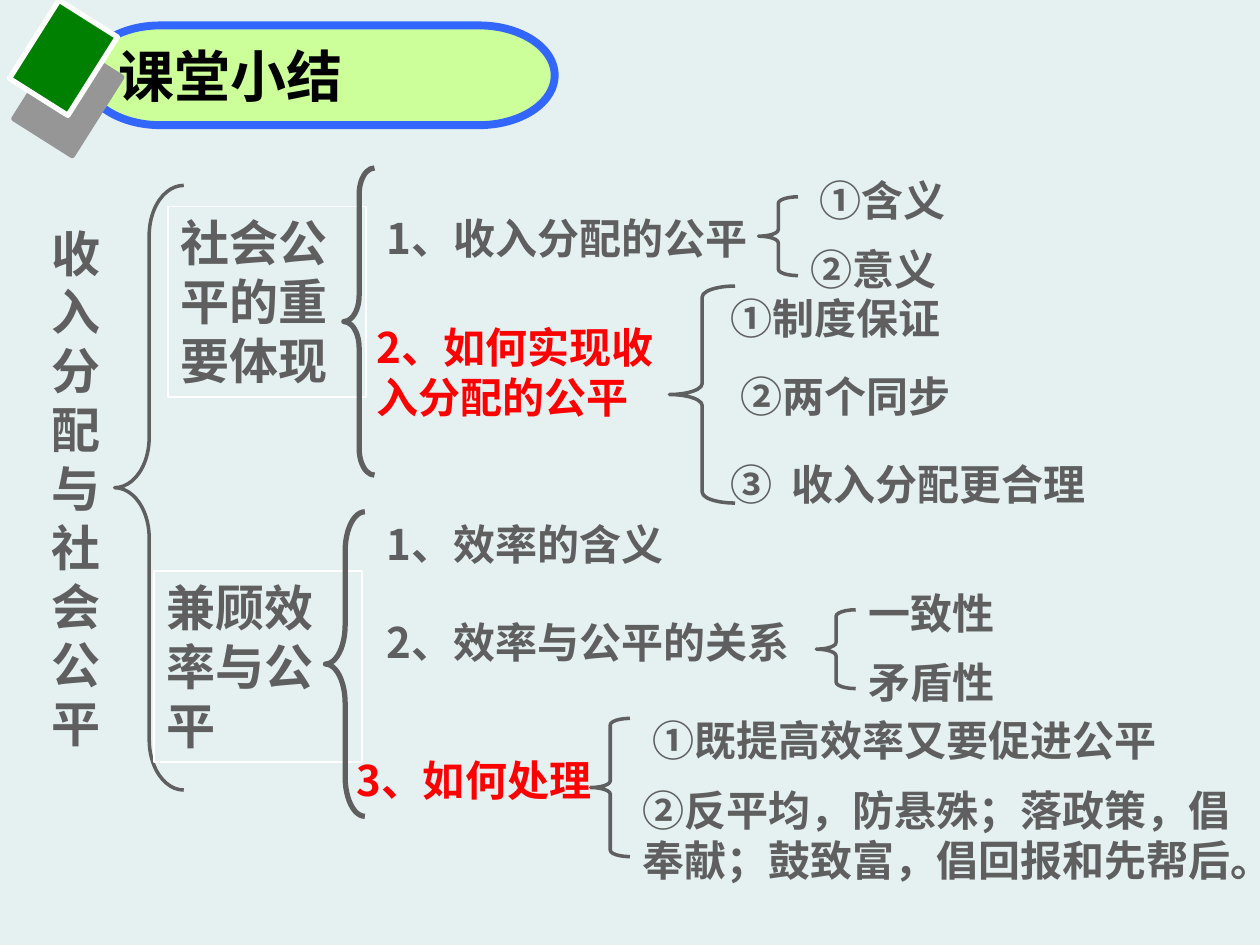
import dataclasses

import pptx
import pptx.dml.color
import pptx.enum.shapes
import pptx.enum.text
import pptx.util

Pt = pptx.util.Pt
Kind = pptx.enum.shapes.MSO_SHAPE


@dataclasses.dataclass(frozen=True)
class Theme:
    """Colours, fonts and type sizes of the slide."""
    back: str = "E5F1F1"
    text: str = "5F5F5F"
    stress: str = "FF0000"
    head: str = "000000"
    pill: str = "CCFF99"
    rim: str = "3366FF"
    shade: str = "969696"
    tile: str = "008000"
    edge: str = "FFFFFF"
    sans: str = "Noto Sans CJK SC"
    plain: str = "Calibri"
    large: int = 32
    mid: int = 28
    small: int = 24


LOOK = Theme()


def tint(code):
    """Turn a hex code into a colour."""
    return pptx.dml.color.RGBColor.from_string(code)


def place(box, spot):
    """Return lengths for a spot inside a box."""
    left, top, width, height = spot
    return Pt(box[0] + left), Pt(box[1] + top), Pt(width), Pt(height)


def style(frame, size, color, font, wrap=True):
    """Format all the text of a frame."""
    frame.word_wrap = wrap
    for para in frame.paragraphs:
        para.alignment = pptx.enum.text.PP_ALIGN.LEFT
        for run in para.runs:
            run.font.size = Pt(size)
            run.font.bold = True
            run.font.name = font
            run.font.color.rgb = tint(color)


def shape(slide, box, spot, kind, fill, line, weight):
    """Add a preset shape with its fill and line."""
    item = slide.shapes.add_shape(kind, *place(box, spot))
    item.shadow.inherit = False
    if fill:
        item.fill.solid()
        item.fill.fore_color.rgb = tint(fill)
    else:
        item.fill.background()
    item.line.color.rgb = tint(line)
    item.line.width = Pt(weight)
    return item


def brace(slide, box, spot, bend=0.167, weight=2):
    """Add a left brace."""
    item = shape(slide, box, spot, Kind.LEFT_BRACE, None, LOOK.text, weight)
    item.adjustments[0] = bend


def note(slide, box, spot, text, color=LOOK.text, size=LOOK.small,
         font=LOOK.sans):
    """Add a wrapped text box."""
    item = slide.shapes.add_textbox(*place(box, spot))
    item.text_frame.text = text
    style(item.text_frame, size, color, font)


def label(slide, box, spot, text):
    """Add a branch name in a thin frame."""
    item = shape(slide, box, spot, Kind.RECTANGLE, None, LOOK.edge, 1)
    item.text_frame.text = text
    item.text_frame.vertical_anchor = pptx.enum.text.MSO_ANCHOR.TOP
    style(item.text_frame, LOOK.mid, LOOK.text, LOOK.plain)


def header(slide, box):
    """Draw the title pill with its two tilted tiles."""
    shape(slide, box, (32, 8, 268.5, 57), Kind.FLOWCHART_TERMINATOR,
          LOOK.pill, LOOK.rim, 4.5)
    for spot, fill, line in (
            ((2.5, 23, 39.5, 53), LOOK.shade, LOOK.shade),
            ((0, 0, 39.5, 53), LOOK.tile, LOOK.edge)):
        tile = shape(slide, box, spot, Kind.FLOWCHART_PROCESS, fill, line, 3)
        tile.rotation = 32.3
    title = slide.shapes.title
    title.left, title.top, title.width, title.height = place(
        box, (44, 8, 220, 57))
    title.text_frame.text = "课堂小结"
    title.text_frame.vertical_anchor = pptx.enum.text.MSO_ANCHOR.MIDDLE
    style(title.text_frame, LOOK.large, LOOK.head, LOOK.plain, False)
    title.element.getparent().append(title.element)


def root(slide, box):
    """Draw the stacked topic and its brace."""
    note(slide, box, (0, 18, 45, 310), "收入分配与社会公平", size=LOOK.mid)
    brace(slide, box, (43, 0, 39.5, 345.5), 0.727)


def fair(slide, box):
    """Draw the branch on social fairness."""
    label(slide, box, (0, 22, 113, 109), "社会公平的重要体现")
    brace(slide, box, (100.5, 0, 17.5, 175.5), 0.862, 3)
    brace(slide, box, (337.5, 16.5, 22.5, 45))
    brace(slide, box, (286.5, 67.5, 37.5, 124))
    note(slide, box, (112, 84, 186, 66), "2、如何实现收入分配的公平",
         LOOK.stress)
    for spot, text in (
            ((118, 22, 221, 37), "1、收入分配的公平"),
            ((365.5, 0, 127, 36), "①含义"),
            ((360, 39.5, 117, 36), "②意义"),
            ((314.5, 67.5, 152, 37), "①制度保证"),
            ((320, 112, 304, 37), "②两个同步"),
            ((314.5, 162.5, 62, 37), "③"),
            ((349, 162.5, 190, 36), "收入分配更合理")):
        note(slide, box, spot, text)


def balance(slide, box):
    """Draw the branch on efficiency and fairness."""
    label(slide, box, (0, 34, 119, 109), "兼顾效率与公平")
    brace(slide, box, (98, 0, 22.5, 174), 0.996, 3)
    brace(slide, box, (378.5, 56, 22.5, 45))
    brace(slide, box, (249.5, 118, 22.5, 79))
    note(slide, box, (108.5, 135, 158, 37), "3、如何处理", LOOK.stress)
    for spot, text in (
            ((126, 0, 204, 37), "1、效率的含义"),
            ((126, 56, 253.5, 37), "2、效率与公平的关系"),
            ((401.5, 39.5, 108, 37), "一致性"),
            ((401.5, 79, 108, 37), "矛盾性")):
        note(slide, box, spot, text)
    for spot, text in (
            ((278, 112, 323, 36), "①既提高效率又要促进公平"),
            ((272, 152, 360, 65),
             "②反平均，防悬殊；落政策，倡奉献；鼓致富，倡回报和先帮后。")):
        note(slide, box, spot, text, font=LOOK.plain)


def main():
    """Build and save the slide."""
    deck = pptx.Presentation()
    deck.slide_width, deck.slide_height = Pt(720), Pt(540)
    slide = deck.slides.add_slide(deck.slide_layouts[5])
    slide.background.fill.solid()
    slide.background.fill.fore_color.rgb = tint(LOOK.back)
    root(slide, (22.5, 106, 82.5, 345.5))
    fair(slide, (96, 96, 624, 200))
    balance(slide, (88, 292.5, 632, 217))
    header(slide, (16.5, 6.5, 300.5, 76))
    deck.save("out.pptx")


if __name__ == "__main__":
    main()
